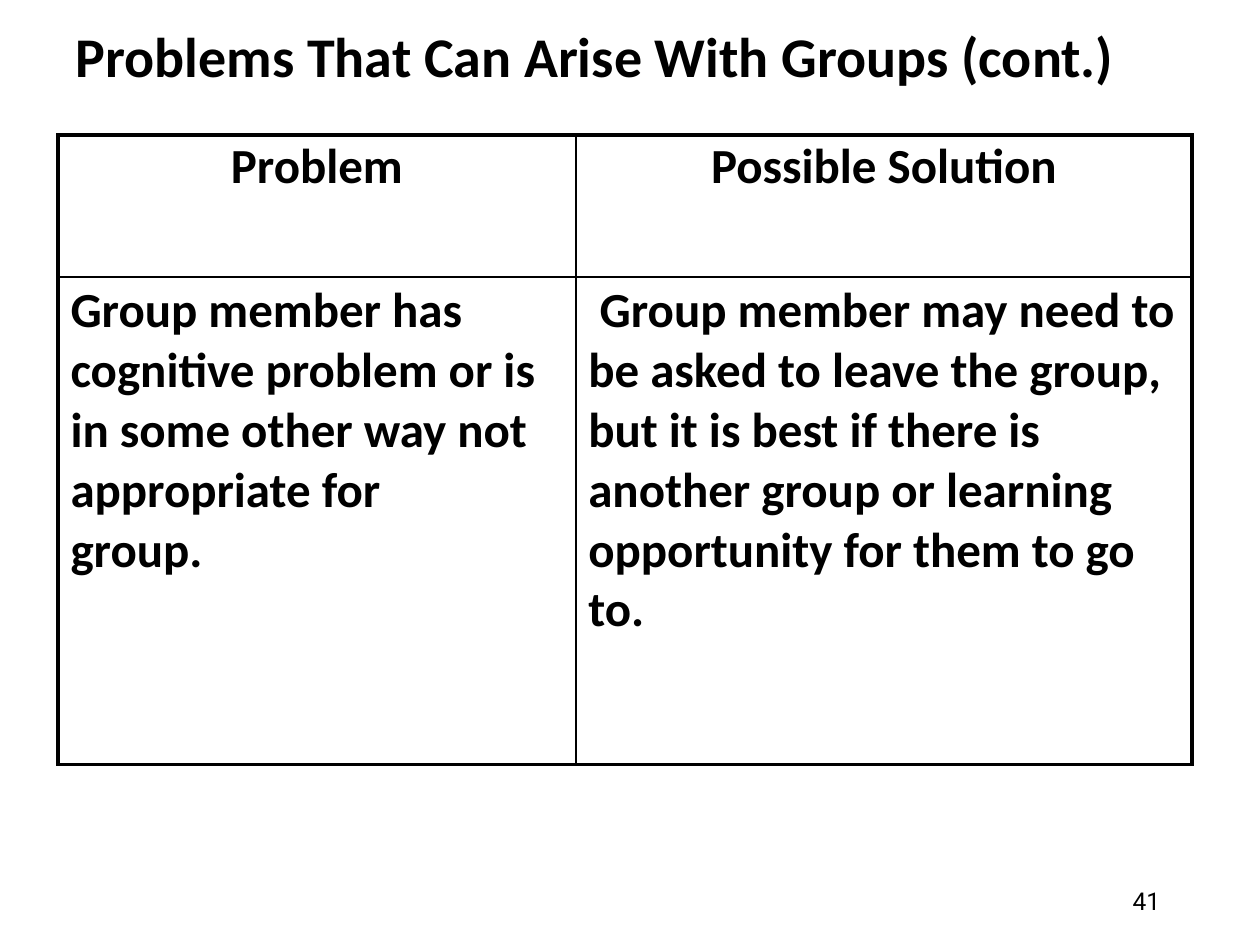
import dataclasses
import lxml.etree
import pptx
import pptx.dml.color
import pptx.enum.text
import pptx.oxml.ns
import pptx.util

Inches = pptx.util.Inches
Pt = pptx.util.Pt
Align = pptx.enum.text.PP_ALIGN
qn = pptx.oxml.ns.qn


@dataclasses.dataclass(frozen=True)
class Theme:
    ink: str = "000000"
    font: str = "Calibri"
    digit: str = "Roboto"
    title: int = 32
    body: int = 28
    page: int = 14
    thick: float = 2.25
    thin: float = 1


THEME = Theme()
HEADS = ["Problem", "Possible Solution"]
CASE = [
    ["Group member has cognitive problem or is in some other way not appropriate for", "group."],
    ["Group member may need to be asked to leave the group, but it is best if there is "
     "another group or learning opportunity for them to go to."],
]


def write(frame, lines, size, font=THEME.font, bold=True, align=Align.LEFT, before=0, first=0):
    frame.word_wrap = True
    for i, line in enumerate(lines):
        para = frame.paragraphs[0] if i == 0 else frame.add_paragraph()
        para.alignment = align
        if first:
            para._p.get_or_add_pPr().set("indent", str(Inches(first)))
        if i == 0 and before:
            para.space_before = Pt(before)
        run = para.add_run()
        run.text = line
        run.font.name = font
        run.font.size = Pt(size)
        run.font.bold = bold
        run.font.color.rgb = pptx.dml.color.RGBColor.from_string(THEME.ink)


def add_text(slide, box, text, size, **style):
    frame = slide.shapes.add_textbox(*map(Inches, box)).text_frame
    frame.margin_left = frame.margin_right = 0
    frame.margin_top = frame.margin_bottom = 0
    write(frame, [text], size, **style)


def edge(cell, widths):
    props = cell._tc.get_or_add_tcPr()
    for i, (side, width) in enumerate(widths.items()):
        line = lxml.etree.Element(qn("a:ln" + side), w=str(Pt(width)))
        fill = lxml.etree.SubElement(line, qn("a:solidFill"))
        lxml.etree.SubElement(fill, qn("a:srgbClr"), val=THEME.ink)
        props.insert(i, line)


def add_grid(slide, left, top, cols, rows):
    shape = slide.shapes.add_table(
        len(rows), len(cols), Inches(left), Inches(top), Inches(sum(cols)), Inches(sum(rows)))
    table = shape.table
    table.first_row = table.horz_banding = False
    for col, width in zip(table.columns, cols):
        col.width = Inches(width)
    for row, height in zip(table.rows, rows):
        row.height = Inches(height)
    for r in range(len(rows)):
        for c in range(len(cols)):
            cell = table.cell(r, c)
            cell.fill.background()
            cell.margin_left = cell.margin_right = Inches(0.1 if r else 0)
            cell.margin_top = Inches(0.03 if r else 0.02)
            cell.margin_bottom = 0
            outer = {"L": c == 0, "R": c == len(cols) - 1,
                     "T": r == 0, "B": r == len(rows) - 1}
            edge(cell, {s: THEME.thick if out else THEME.thin for s, out in outer.items()})
    return table


def main():
    deck = pptx.Presentation()
    deck.slide_width, deck.slide_height = Inches(10), Inches(7.5)
    slide = deck.slides.add_slide(deck.slide_layouts[6])
    add_text(slide, (0.6, 0.17, 8.6, 0.56), "Problems That Can Arise With Groups (cont.)", THEME.title)
    table = add_grid(slide, 0.46, 1.07, [4.11, 4.89], [1.13, 3.87])
    for c, (head, lines) in enumerate(zip(HEADS, CASE)):
        write(table.cell(0, c).text_frame, [head], THEME.body, align=Align.CENTER, before=1.8)
        write(table.cell(1, c).text_frame, lines, THEME.body, before=1.8, first=0.09 * c)
    add_text(slide, (8.99, 7.03, 0.3, 0.25), "41", THEME.page, font=THEME.digit, bold=False)
    deck.save("out.pptx")


if __name__ == "__main__":
    main()
